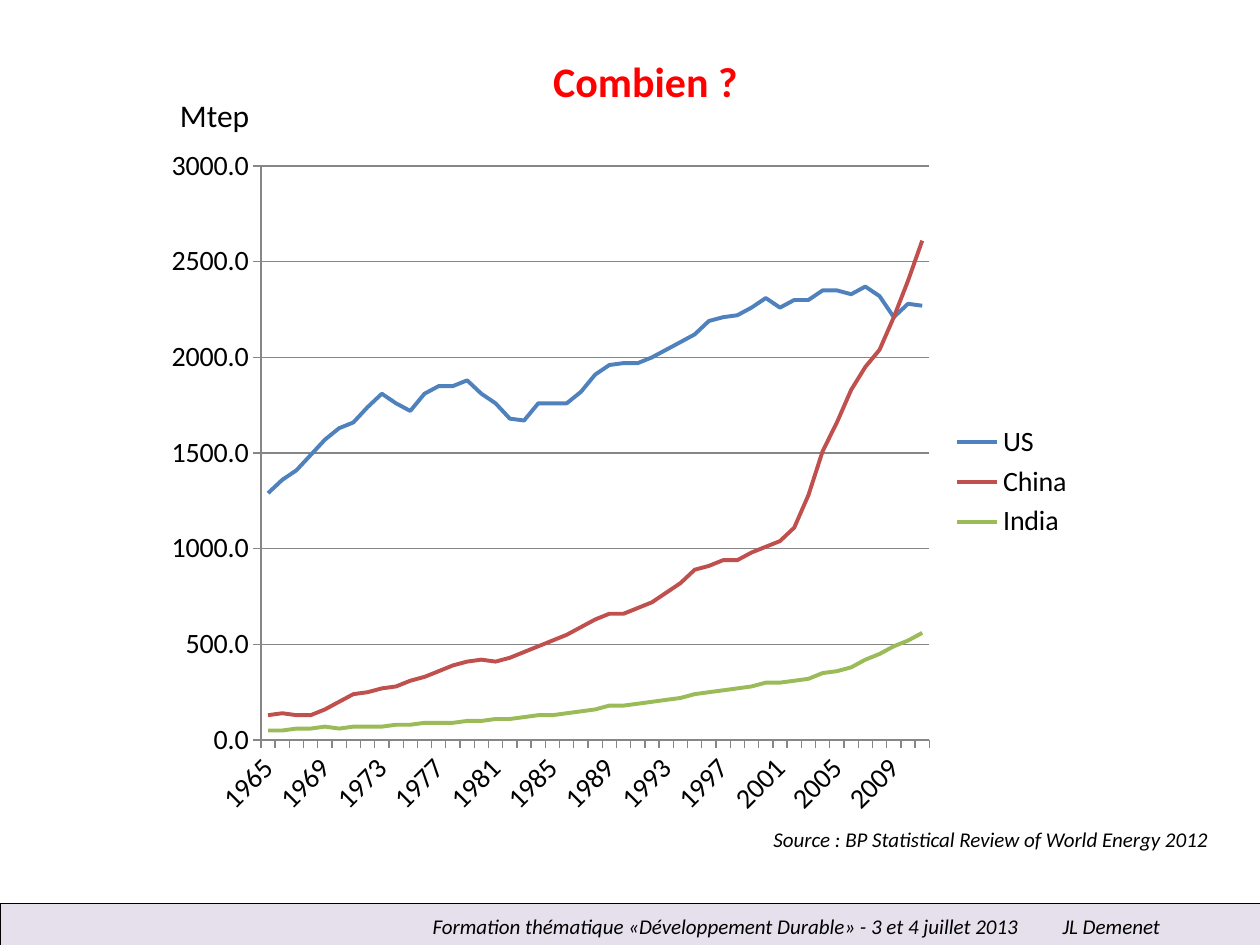
from lxml import etree
from pptx import Presentation
from pptx import util as u
from pptx.chart.data import CategoryChartData
from pptx.dml.color import RGBColor
from pptx.enum import chart as ch, shapes, text
from pptx.oxml import ns

COLORS = {
    "black": "000000", "title": "FF0000", "band": "E6E0EC", "grid": "868686",
    "US": "4F81BD", "China": "C0504D", "India": "9BBB59",
}
FONT = "Calibri"
YEARS = [str(y) for y in range(1965, 2012)]
ENERGY = {
    "US": [1290, 1360, 1410, 1490, 1570, 1630, 1660, 1740, 1810, 1760, 1720, 1810,
           1850, 1850, 1880, 1810, 1760, 1680, 1670, 1760, 1760, 1760, 1820, 1910,
           1960, 1970, 1970, 2000, 2040, 2080, 2120, 2190, 2210, 2220, 2260, 2310,
           2260, 2300, 2300, 2350, 2350, 2330, 2370, 2320, 2210, 2280, 2270],
    "China": [130, 140, 130, 130, 160, 200, 240, 250, 270, 280, 310, 330,
              360, 390, 410, 420, 410, 430, 460, 490, 520, 550, 590, 630,
              660, 660, 690, 720, 770, 820, 890, 910, 940, 940, 980, 1010,
              1040, 1110, 1280, 1510, 1660, 1830, 1950, 2040, 2210, 2400, 2610],
    "India": [50, 50, 60, 60, 70, 60, 70, 70, 70, 80, 80, 90,
              90, 90, 100, 100, 110, 110, 120, 130, 130, 140, 150, 160,
              180, 180, 190, 200, 210, 220, 240, 250, 260, 270, 280, 300,
              300, 310, 320, 350, 360, 380, 420, 450, 490, 520, 560],
}


def rgb(name):
    """Return the named colour."""
    return RGBColor.from_string(COLORS[name])


def inches(*values):
    """Turn numbers into lengths in inches."""
    return [u.Inches(v) for v in values]


def write(sp, words, size, color="black", bold=False, italic=False,
          align=text.PP_ALIGN.LEFT, anchor=text.MSO_ANCHOR.TOP, wrap=True):
    """Write one formatted paragraph into a shape."""
    tf = sp.text_frame
    tf.word_wrap = wrap
    tf.auto_size = text.MSO_AUTO_SIZE.NONE
    tf.vertical_anchor = anchor
    tf.margin_left = tf.margin_right = u.Inches(0.1)
    tf.margin_top = tf.margin_bottom = u.Inches(0.05)
    p = tf.paragraphs[0]
    p.alignment = align
    r = p.add_run()
    r.text = words
    r.font.name, r.font.size = FONT, u.Pt(size)
    r.font.bold, r.font.italic = bold, italic
    r.font.color.rgb = rgb(color)


def add_label(s, box, words, size, **fmt):
    """Add a text box."""
    write(s.shapes.add_textbox(*inches(*box)), words, size, **fmt)


def add_band(group, box, outlined):
    """Add a filled footer rectangle and return it."""
    sp = group.shapes.add_shape(shapes.MSO_SHAPE.RECTANGLE, *inches(*box))
    sp.shadow.inherit = False
    sp.fill.solid()
    sp.fill.fore_color.rgb = rgb("band")
    if outlined:
        sp.line.color.rgb = rgb("black")
        sp.line.width = u.Pt(0.25)
    else:
        sp.line.fill.background()
    return sp


def style_line(line, color, width):
    """Set the colour and width of a line."""
    line.color.rgb = rgb(color)
    line.width = u.Pt(width)


def place_plot(chart, **fractions):
    """Fix the inner plot area as fractions of the chart."""
    area = chart._chartSpace.chart.plotArea
    for old in area.findall(ns.qn("c:layout")):
        area.remove(old)
    layout = etree.Element(ns.qn("c:layout"))
    area.insert(0, layout)
    manual = etree.SubElement(layout, ns.qn("c:manualLayout"))
    values = {"layoutTarget": "inner", "xMode": "edge", "yMode": "edge", **fractions}
    for tag, value in values.items():
        etree.SubElement(manual, ns.qn("c:" + tag)).set("val", str(value))


def style_axes(chart):
    """Format the year and energy axes."""
    years, energy = chart.category_axis, chart.value_axis
    for axis in (years, energy):
        axis.major_tick_mark = ch.XL_TICK_MARK.OUTSIDE
        axis.tick_labels.font.size = u.Pt(16)
        style_line(axis.format.line, "grid", 0.75)
    energy.minimum_scale, energy.maximum_scale, energy.major_unit = 0, 3000, 500
    energy.has_major_gridlines = True
    style_line(energy.major_gridlines.format.line, "grid", 0.75)
    energy.tick_labels.number_format = "0.0"
    energy.tick_labels.number_format_is_linked = False
    years._element.find(ns.qn("c:txPr")).find(ns.qn("a:bodyPr")).set("rot", "-2700000")
    skip = etree.Element(ns.qn("c:tickLblSkip"), val="4")
    years._element.find(ns.qn("c:noMultiLvlLbl")).addprevious(skip)


def add_energy_chart(s, box):
    """Add the line chart of energy use by country."""
    data = CategoryChartData(number_format="0.0")
    data.categories = YEARS
    for country, values in ENERGY.items():
        data.add_series(country, values)
    chart = s.shapes.add_chart(ch.XL_CHART_TYPE.LINE, *inches(*box), data).chart
    chart.has_title = False
    chart.font.name, chart.font.size = FONT, u.Pt(10)
    chart.font.color.rgb = rgb("black")
    chart.plots[0].vary_by_categories = False
    for series in chart.plots[0].series:
        series.smooth = False
        style_line(series.format.line, series.name, 2.25)
    chart.has_legend = True
    chart.legend.position = ch.XL_LEGEND_POSITION.RIGHT
    chart.legend.include_in_layout = False
    chart.legend.font.size = u.Pt(16)
    style_axes(chart)
    place_plot(chart, x=0.115, y=0.045, w=0.717, h=0.827)


def add_footer(s):
    """Add the footer band with its caption."""
    group = s.shapes.add_group_shape()
    add_band(group, (0, 7.17, 10, 0.34), True)
    caption = add_band(group, (2.66, 7.2, 7.32, 0.3), False)
    write(caption, "Formation thématique «Développement Durable» - 3 et 4 juillet 2013\tJL Demenet",
          12, italic=True, align=text.PP_ALIGN.CENTER)


def main():
    """Build and save the slide."""
    prs = Presentation()
    prs.slide_width, prs.slide_height = inches(10, 7.5)
    s = prs.slides.add_slide(prs.slide_layouts[5])
    add_energy_chart(s, (1.22, 1.07, 7.4, 5.51))
    add_label(s, (1.33, 0.71, 0.76, 0.4), "Mtep", 18, wrap=False)
    add_label(s, (6.04, 6.51, 3.8, 0.3),
              "Source : BP Statistical Review of World Energy 2012", 12, italic=True)
    title = s.shapes.title
    title.left, title.top, title.width, title.height = inches(4.29, 0.29, 1.73, 0.7)
    write(title, "Combien ?", 24, color="title", bold=True, anchor=text.MSO_ANCHOR.MIDDLE)
    add_footer(s)
    prs.save("out.pptx")


if __name__ == "__main__":
    main()
